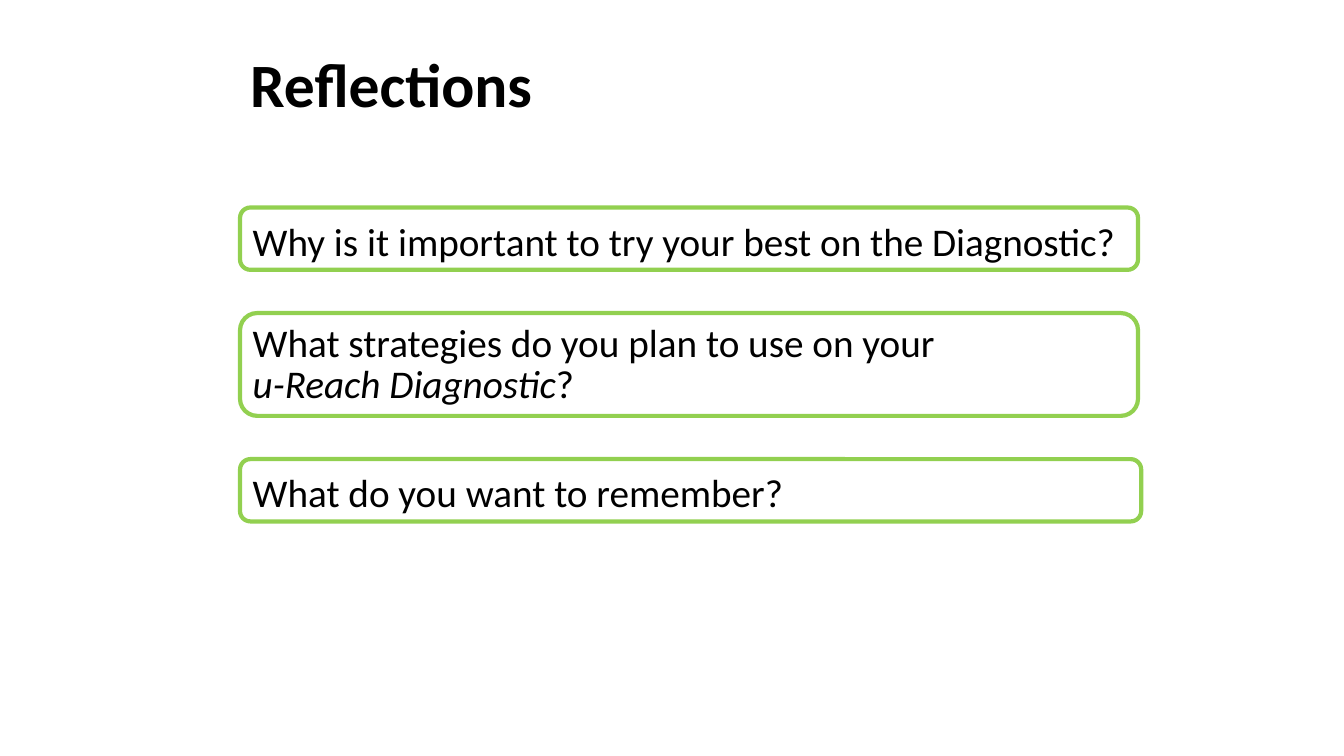
import dataclasses

import pptx
import pptx.dml.color
import pptx.enum.shapes
import pptx.enum.text
import pptx.shapes.group
import pptx.text.text
import pptx.util
from pptx.util import Cm

FONT_NAME = "Calibri"
BLACK, WHITE, GREEN = "000000", "FFFFFF", "92D050"
LEFT = 6.05
FIRST_TOP = 5.23
GAP = 1.09
TEXT_SHIFT = 0.07


@dataclasses.dataclass
class Question:
    """A framed question; lines hold (text, italic) pieces, lengths are in cm."""
    lines: list[list[tuple[str, bool]]]
    frame_width: float
    frame_height: float
    text_width: float
    text_height: float
    text_inset: float


QUESTIONS = [
    Question([[("Why is it important to try your best on the Diagnostic?", False)]],
             22.63, 1.57, 22.63, 1.32, 0.27),
    Question([[("What strategies do you plan to use on your ", False)],
              [("u-Reach Diagnostic", True), ("?", False)]],
             22.63, 2.59, 22.25, 2.36, 0.16),
    Question([[("What do you want to remember?", False)]],
             22.71, 1.57, 14.0, 1.32, 0.27),
]


def color(value: str) -> pptx.dml.color.RGBColor:
    return pptx.dml.color.RGBColor.from_string(value)


def format_font(font: pptx.text.text.Font, size: float, bold: bool = False) -> None:
    font.name = FONT_NAME
    font.size = pptx.util.Pt(size)
    font.bold = bold
    font.color.rgb = color(BLACK)


def draw_title(slide: pptx.slide.Slide, text: str) -> None:
    title = slide.shapes.title
    title.left, title.top, title.width, title.height = Cm(LEFT), Cm(1.02), Cm(23.57), Cm(2.13)
    frame = title.text_frame
    frame.text = text
    frame.auto_size = pptx.enum.text.MSO_AUTO_SIZE.NONE
    frame.vertical_anchor = pptx.enum.text.MSO_ANCHOR.TOP
    paragraph = frame.paragraphs[0]
    paragraph.alignment = pptx.enum.text.PP_ALIGN.LEFT
    format_font(paragraph.font, 44, bold=True)


def draw_frame(group: pptx.shapes.group.GroupShape, question: Question, top: float) -> None:
    outline = group.shapes.add_shape(
        pptx.enum.shapes.MSO_SHAPE.ROUNDED_RECTANGLE,
        Cm(LEFT), Cm(top), Cm(question.frame_width), Cm(question.frame_height))
    outline.shadow.inherit = False
    outline.fill.solid()
    outline.fill.fore_color.rgb = color(WHITE)
    outline.line.color.rgb = color(GREEN)
    outline.line.width = pptx.util.Pt(3)


def draw_text(group: pptx.shapes.group.GroupShape, question: Question, top: float) -> None:
    box = group.shapes.add_textbox(
        Cm(LEFT + TEXT_SHIFT), Cm(top + question.text_inset),
        Cm(question.text_width), Cm(question.text_height))
    box.text_frame.word_wrap = True
    paragraph = box.text_frame.paragraphs[0]
    paragraph.line_spacing = 0.88
    format_font(paragraph.font, 28)
    for number, line in enumerate(question.lines):
        if number:
            paragraph.add_line_break()
        for text, italic in line:
            run = paragraph.add_run()
            run.text = text
            if italic:
                run.font.italic = True


def main() -> None:
    presentation = pptx.Presentation()
    presentation.slide_width, presentation.slide_height = Cm(33.87), Cm(19.05)
    slide = presentation.slides.add_slide(presentation.slide_layouts.get_by_name("Title Only"))
    draw_title(slide, "Reflections")
    top = FIRST_TOP
    for question in QUESTIONS:
        group = slide.shapes.add_group_shape()
        draw_frame(group, question, top)
        draw_text(group, question, top)
        top += question.frame_height + GAP
    presentation.save("out.pptx")


if __name__ == "__main__":
    main()
